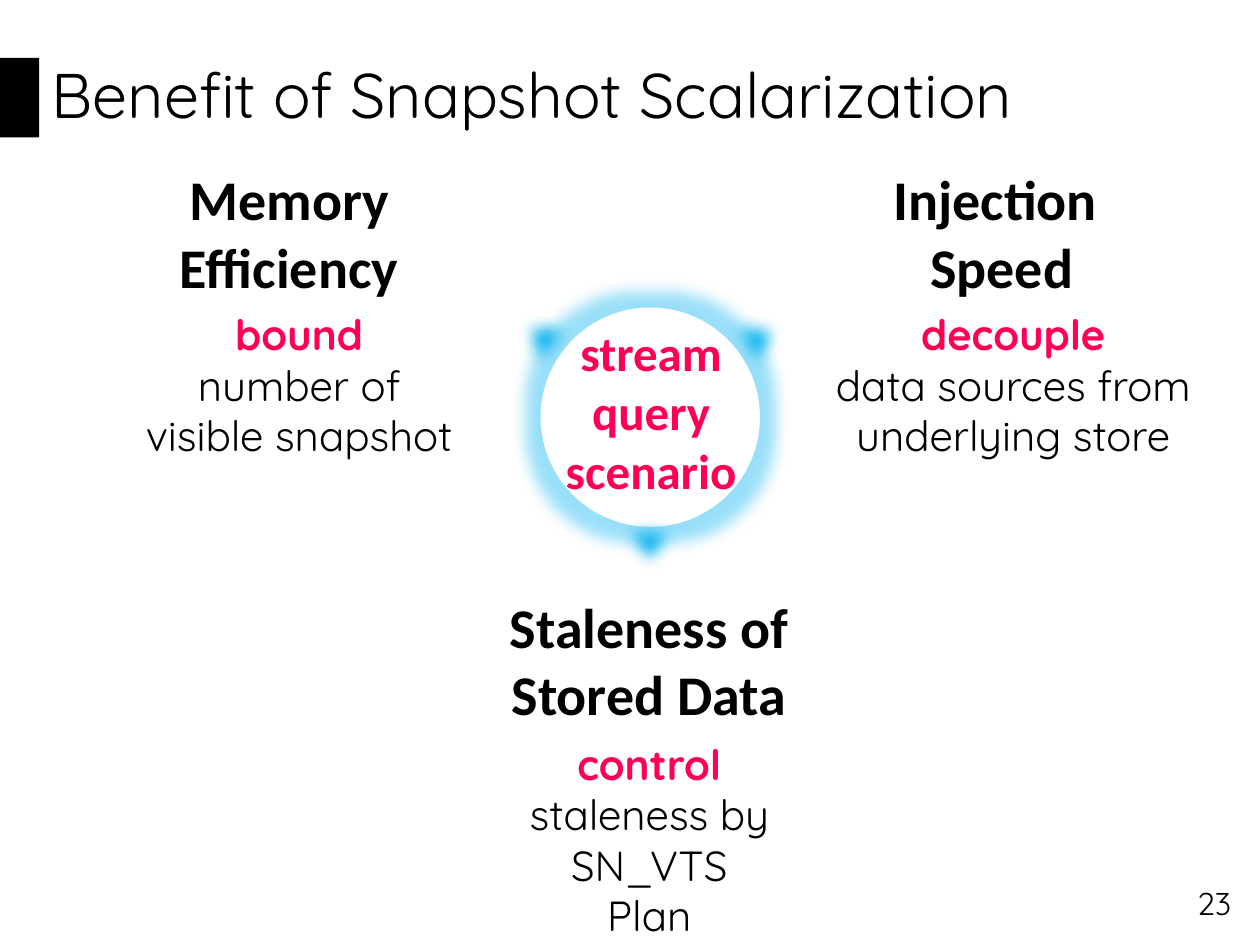
from typing import NamedTuple

from lxml.etree import SubElement
from pptx import Presentation
from pptx.dml.color import RGBColor
from pptx.enum.shapes import MSO_SHAPE as Preset
from pptx.enum.text import MSO_ANCHOR as Anchor, PP_ALIGN as Align
from pptx.oxml.ns import qn
from pptx.util import Cm, Pt

COLORS = {"black": "000000", "white": "FFFFFF", "pink": "FF0053", "blue": "00B0F0"}
BODY_FONT = "Quicksand"
HEADING_FONT = "Calibri"


class Box(NamedTuple):
    left: float
    top: float
    width: float
    height: float


class Benefit(NamedTuple):
    heading_box: Box
    heading: list[str]
    detail_box: Box
    keyword: str
    details: list[str]


class Pointer(NamedTuple):
    left: float
    top: float
    rotation: float


BENEFITS = [
    Benefit(Box(3.33, 3.2, 5, 3), ["Memory", "Efficiency"],
            Box(2.51, 6.1, 7.04, 3.33), "bound", ["number of", "visible snapshot"]),
    Benefit(Box(17.73, 3.2, 4.93, 3), ["Injection ", "Speed"],
            Box(16.41, 6.1, 8.03, 3.33), "decouple", ["data sources from", "underlying store"]),
    Benefit(Box(10, 11.81, 6.17, 3), ["Staleness of", "Stored Data"],
            Box(10.36, 14.76, 5.46, 3.33), "control", ["staleness by", "SN_VTS Plan"]),
]
POINTERS = [Pointer(11.99, 10.44, 180), Pointer(14.35, 5.99, 59.6), Pointer(9.7, 5.94, 308.2)]


def color(name: str) -> RGBColor:
    return RGBColor.from_string(COLORS[name])


def style(paragraph, font_name: str, size: int, color_name: str = "black", bold: bool = False):
    font = paragraph.font
    font.name, font.size, font.bold = font_name, Pt(size), bold
    font.color.rgb = color(color_name)


def add_lines(slide, box: Box, lines: list[str], font_name: str, size: int,
              color_name: str = "black", bold: bool = False,
              align=Align.CENTER, wrap: bool = True):
    """Add a text box with one paragraph per line and return its text frame."""
    frame = slide.shapes.add_textbox(*map(Cm, box)).text_frame
    frame.word_wrap = wrap
    frame.text = "\n".join(lines)
    for paragraph in frame.paragraphs:
        paragraph.alignment = align
        style(paragraph, font_name, size, color_name, bold)
    return frame


def add_filled(slide, preset, box: Box, color_name: str):
    shape = slide.shapes.add_shape(preset, *map(Cm, box))
    shape.shadow.inherit = False
    shape.fill.solid()
    shape.fill.fore_color.rgb = color(color_name)
    shape.line.fill.background()
    return shape


def add_effect(shape, kind: str, radius: Pt):
    """Add a glow or softEdge element to the shape's effect list."""
    effects = shape.element.spPr.find(qn("a:effectLst"))
    return SubElement(effects, qn(f"a:{kind}"), rad=str(int(radius)))


def add_benefit(slide, benefit: Benefit):
    add_lines(slide, benefit.heading_box, benefit.heading, HEADING_FONT, 32,
              bold=True, wrap=False)
    frame = add_lines(slide, benefit.detail_box, [benefit.keyword, *benefit.details],
                      BODY_FONT, 24)
    style(frame.paragraphs[0], BODY_FONT, 24, "pink", bold=True)


def main():
    presentation = Presentation()
    presentation.slide_width, presentation.slide_height = Cm(25.4), Cm(19.05)
    slide = presentation.slides.add_slide(presentation.slide_layouts[5])

    # Title with its black marker
    title = slide.shapes.title
    title.left, title.top, title.width, title.height = map(Cm, Box(0.79, 0, 24.61, 3.94))
    title.text_frame.text = "Benefit of Snapshot Scalarization"
    title.text_frame.vertical_anchor = Anchor.MIDDLE
    paragraph = title.text_frame.paragraphs[0]
    paragraph.alignment, paragraph.line_spacing = Align.LEFT, 0.9
    style(paragraph, BODY_FONT, 36)
    add_filled(slide, Preset.RECTANGLE, Box(0, 1.17, 0.79, 1.6), "black")

    # Glowing circle in the centre
    circle = add_filled(slide, Preset.OVAL, Box(10.9, 6.2, 4.42, 4.42), "white")
    glow = add_effect(circle, "glow", Pt(18))
    glow_color = SubElement(glow, qn("a:srgbClr"), val=COLORS["blue"])
    SubElement(glow_color, qn("a:alpha"), val="40000")
    add_lines(slide, Box(10.85, 6.38, 4.55, 3.84), ["stream", "query", "scenario"],
              HEADING_FONT, 28, "pink", bold=True)

    # Soft pointers towards the benefits
    for pointer in POINTERS:
        triangle = add_filled(slide, Preset.ISOSCELES_TRIANGLE,
                              Box(pointer.left, pointer.top, 2.21, 1.63), "blue")
        triangle.rotation = pointer.rotation
        add_effect(triangle, "softEdge", Pt(9))

    # Benefits around the circle
    for benefit in BENEFITS:
        add_benefit(slide, benefit)

    # Page number
    number = add_lines(slide, Box(23.27, 17.7, 1.8, 1.02), ["23"], BODY_FONT, 18,
                       align=Align.RIGHT)
    number.vertical_anchor = Anchor.MIDDLE

    presentation.save("out.pptx")


if __name__ == "__main__":
    main()
